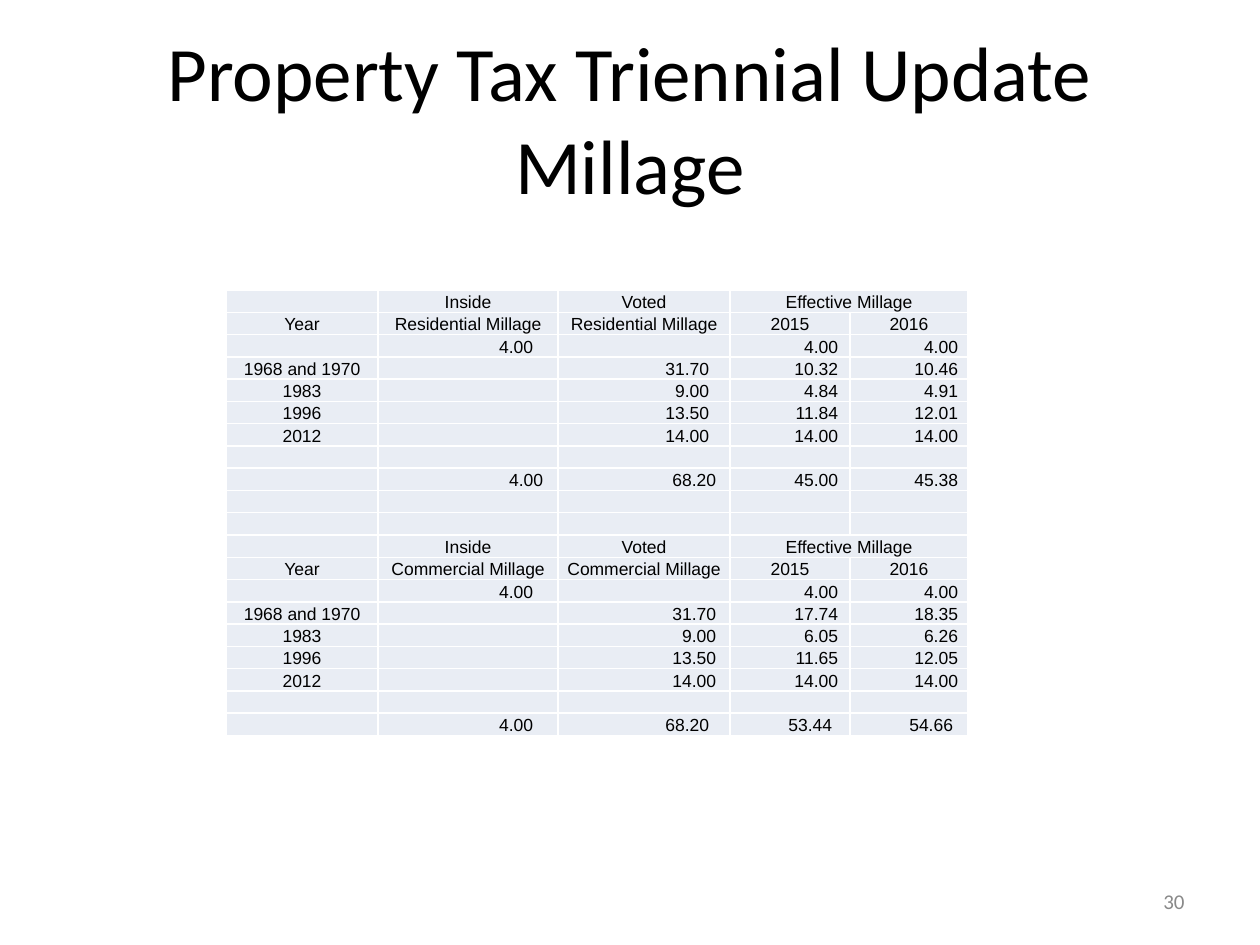
from dataclasses import dataclass

from lxml import etree
from pptx import Presentation
from pptx.dml.color import RGBColor
from pptx.enum.text import MSO_ANCHOR, PP_ALIGN
from pptx.oxml.ns import qn
from pptx.util import Pt

LEFT, CENTER, RIGHT = PP_ALIGN.LEFT, PP_ALIGN.CENTER, PP_ALIGN.RIGHT
MIDDLE, BOTTOM = MSO_ANCHOR.MIDDLE, MSO_ANCHOR.BOTTOM

PX_PER_INCH = 126
EMU_PER_PX = 914400 / PX_PER_INCH
COLORS = {
    "ink": "000000",
    "muted": "898989",
    "cell": "E9EDF4",
    "rule": "FFFFFF",
}
COLUMN_WIDTHS = (152, 180, 172, 120, 118)
TABLE_LEFT, TABLE_TOP, TABLE_HEIGHT = 226, 290, 446
GAP_ROWS = 2


@dataclass
class Label:
    text: str
    left: int
    top: int
    width: int
    height: int
    size: int
    color: str
    align: PP_ALIGN


@dataclass
class Levy:
    year: str
    amounts: tuple[str, str, str, str]


@dataclass
class MillageSection:
    kind: str
    levies: list[Levy]
    totals: tuple[str, str, str, str]
    levy_insets: tuple[int, int, int, int]
    total_insets: tuple[int, int, int, int]


LABELS = [
    Label("Property Tax Triennial Update\vMillage", 63, 38, 1134, 158, 44, "ink", CENTER),
    Label("30", 903, 876, 294, 50, 12, "muted", RIGHT),
]

SECTIONS = [
    MillageSection(
        "Residential",
        [
            Levy("", ("4.00", "", "4.00", "4.00")),
            Levy("1968 and 1970", ("", "31.70", "10.32", "10.46")),
            Levy("1983", ("", "9.00", "4.84", "4.91")),
            Levy("1996", ("", "13.50", "11.84", "12.01")),
            Levy("2012", ("", "14.00", "14.00", "14.00")),
        ],
        ("4.00", "68.20", "45.00", "45.38"),
        (25, 21, 12, 10),
        (15, 14, 12, 10),
    ),
    MillageSection(
        "Commercial",
        [
            Levy("", ("4.00", "", "4.00", "4.00")),
            Levy("1968 and 1970", ("", "31.70", "17.74", "18.35")),
            Levy("1983", ("", "9.00", "6.05", "6.26")),
            Levy("1996", ("", "13.50", "11.65", "12.05")),
            Levy("2012", ("", "14.00", "14.00", "14.00")),
        ],
        ("4.00", "68.20", "53.44", "54.66"),
        (25, 14, 12, 10),
        (25, 21, 18, 15),
    ),
]


def px(length: int) -> int:
    return round(length * EMU_PER_PX)


def style_paragraph(paragraph, font_name: str, size: int, color: str, align: PP_ALIGN) -> None:
    paragraph.alignment = align
    paragraph.font.name = font_name
    paragraph.font.size = Pt(size)
    paragraph.font.color.rgb = RGBColor.from_string(COLORS[color])


def add_label(slide, label: Label) -> None:
    box = slide.shapes.add_textbox(
        px(label.left), px(label.top), px(label.width), px(label.height)
    )
    frame = box.text_frame
    frame.word_wrap = True
    frame.vertical_anchor = MIDDLE
    paragraph = frame.paragraphs[0]
    paragraph.text = label.text
    style_paragraph(paragraph, "Calibri", label.size, label.color, label.align)


def add_borders(cell) -> None:
    properties = cell._tc.get_or_add_tcPr()
    for side in ("a:lnL", "a:lnR", "a:lnT", "a:lnB"):
        line = etree.SubElement(properties, qn(side), w=str(Pt(1)))
        fill = etree.SubElement(line, qn("a:solidFill"))
        etree.SubElement(fill, qn("a:srgbClr"), val=COLORS["rule"])


def format_cell(cell) -> None:
    add_borders(cell)
    cell.fill.solid()
    cell.fill.fore_color.rgb = RGBColor.from_string(COLORS["cell"])
    cell.vertical_anchor = BOTTOM
    cell.margin_left = cell.margin_right = cell.margin_top = px(1)
    cell.margin_bottom = 0
    paragraph = cell.text_frame.paragraphs[0]
    style_paragraph(paragraph, "Arial", 10, "ink", LEFT)
    etree.SubElement(paragraph._p, qn("a:endParaRPr"), sz="1000")


def write_cell(cell, text: str, align: PP_ALIGN = CENTER, inset: int = 1) -> None:
    if text:
        paragraph = cell.text_frame.paragraphs[0]
        paragraph.add_run().text = text
        paragraph.alignment = align
        cell.margin_right = px(inset)


def write_amounts(table, row: int, amounts: tuple, insets: tuple) -> None:
    for column, (amount, inset) in enumerate(zip(amounts, insets), start=1):
        write_cell(table.cell(row, column), amount, RIGHT, inset)


def write_section(table, top_row: int, section: MillageSection) -> None:
    table.cell(top_row, 3).merge(table.cell(top_row, 4))
    millage = f"{section.kind} Millage"
    headings = (
        ("", "Inside", "Voted", "Effective Millage"),
        ("Year", millage, millage, "2015", "2016"),
    )
    for row, texts in enumerate(headings, start=top_row):
        for column, text in enumerate(texts):
            write_cell(table.cell(row, column), text)
    first_levy = top_row + len(headings)
    for row, levy in enumerate(section.levies, start=first_levy):
        write_cell(table.cell(row, 0), levy.year)
        write_amounts(table, row, levy.amounts, section.levy_insets)
    total_row = first_levy + len(section.levies) + 1
    write_amounts(table, total_row, section.totals, section.total_insets)


def add_millage_table(slide) -> None:
    section_rows = len(SECTIONS[0].levies) + 4
    row_count = len(SECTIONS) * (section_rows + GAP_ROWS) - GAP_ROWS
    table = slide.shapes.add_table(
        row_count, len(COLUMN_WIDTHS), px(TABLE_LEFT), px(TABLE_TOP),
        px(sum(COLUMN_WIDTHS)), px(TABLE_HEIGHT),
    ).table
    table.first_row = False
    table.horz_banding = False
    for column, width in zip(table.columns, COLUMN_WIDTHS):
        column.width = px(width)
    for row in table.rows:
        row.height = px(TABLE_HEIGHT) // row_count
    for cell in table.iter_cells():
        format_cell(cell)
    for index, section in enumerate(SECTIONS):
        write_section(table, index * (section_rows + GAP_ROWS), section)


def main() -> None:
    presentation = Presentation()
    presentation.slide_width = px(10 * PX_PER_INCH)
    presentation.slide_height = px(945)
    slide = presentation.slides.add_slide(presentation.slide_layouts[6])
    title, page_number = LABELS
    add_label(slide, title)
    add_millage_table(slide)
    add_label(slide, page_number)
    presentation.save("out.pptx")


if __name__ == "__main__":
    main()
